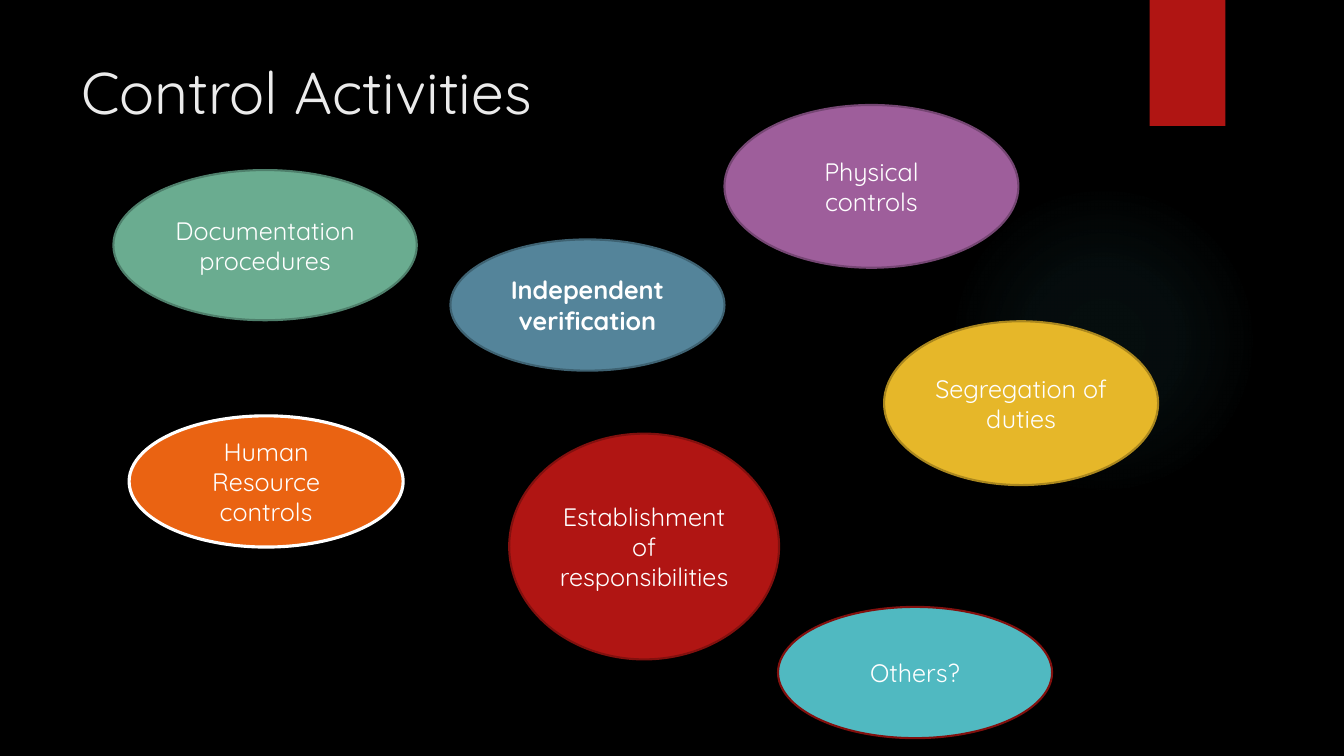
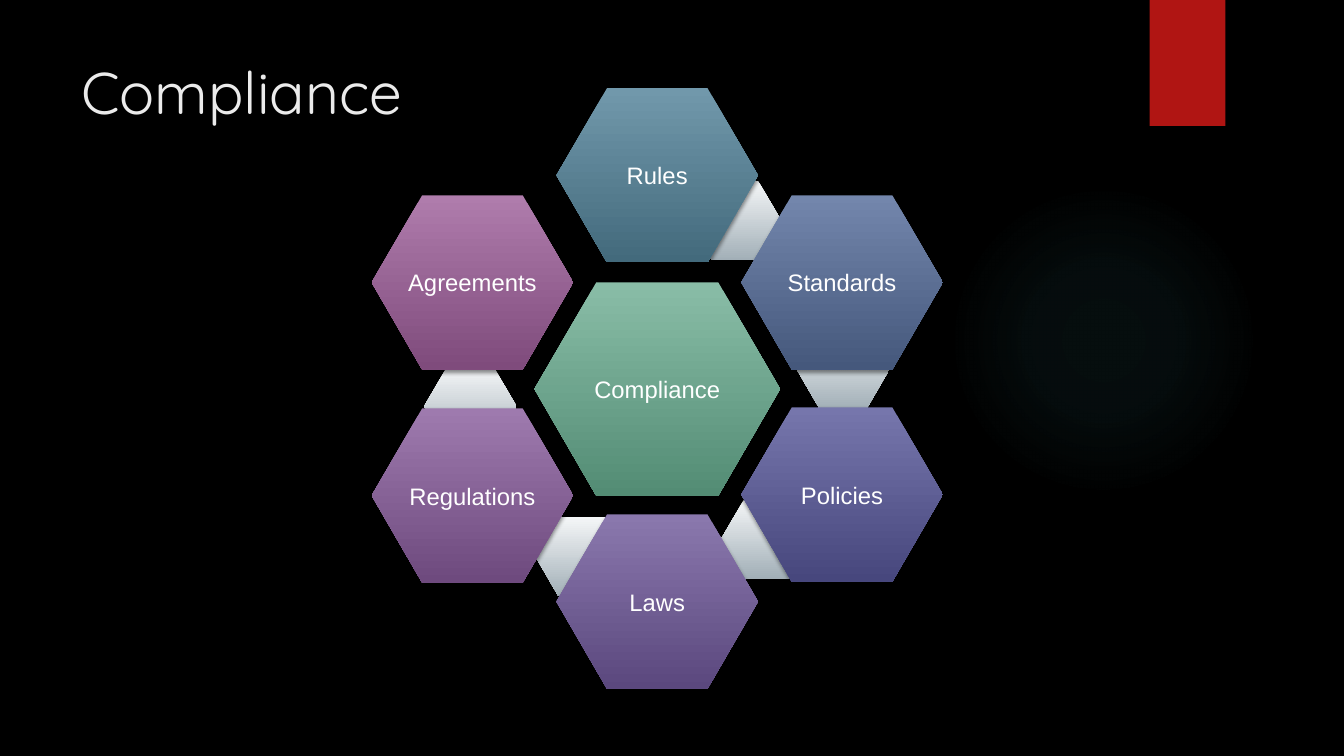
from dataclasses import dataclass
from math import cos, radians, sin

from lxml import etree
from pptx import Presentation
from pptx.dml.color import RGBColor
from pptx.enum.shapes import MSO_SHAPE as SHAPE
from pptx.enum.text import MSO_ANCHOR as ANCHOR, PP_ALIGN as ALIGN
from pptx.oxml import parse_xml
from pptx.oxml.ns import nsdecls, qn
from pptx.util import Pt

PX = 9525  # EMU per px, 96 px to the inch


@dataclass(frozen=True)
class Theme:
    back: str = "000000"
    title: str = "EBEBEB"
    text: str = "FFFFFF"
    red: str = "B01513"
    dark_red: str = "82100E"
    teal: str = "50B9C1"
    link: tuple = ("F5F7F8", "A2AFB7")
    font: str = "Quicksand"
    diagram_font: str = "Arial"
    title_size: int = 42
    label_size: int = 18
    hexagon_size: int = 17


class Deck:
    def __init__(self, theme):
        self.theme = theme
        self.prs = Presentation()
        self.prs.slide_width, self.prs.slide_height = 1280 * PX, 720 * PX
        self.slide = None

    def add_slide(self, title):
        """Start a slide with the background, glow, ribbon and title."""
        t = self.theme
        self.slide = self.prs.slides.add_slide(self.prs.slide_layouts[6])
        fill = self.slide.background.fill
        fill.solid()
        fill.fore_color.rgb = RGBColor.from_string(t.back)
        glow = self.shape(SHAPE.OVAL, 903, 176, 296, 296)
        self.gradient(glow, [(0, t.teal, 7), (36, t.teal, 6), (69, t.teal, 0)], radial=True)
        ribbon = self.shape(SHAPE.RECTANGLE, 1095, 0, 72, 120, t.red)
        self.shadow(ribbon)
        box = self.slide.shapes.add_textbox(68 * PX, 48 * PX, 988 * PX, 147 * PX)
        self.label(box, title, t.title_size, t.font, t.title, ALIGN.LEFT, ANCHOR.TOP)

    def shape(self, kind, x, y, w, h, fill=None):
        sp = self.slide.shapes.add_shape(kind, x * PX, y * PX, w * PX, h * PX)
        sp.shadow.inherit = False
        sp.line.fill.background()
        if fill:
            sp.fill.solid()
            sp.fill.fore_color.rgb = RGBColor.from_string(fill)
        return sp

    def gradient(self, sp, stops, radial=False):
        """Fill with (position %, colour, opacity %) stops, downwards or from the centre."""
        marks = "".join(
            f'<a:gs pos="{pos * 1000}"><a:srgbClr val="{color}">'
            f'<a:alpha val="{alpha * 1000}"/></a:srgbClr></a:gs>'
            for pos, color, alpha in stops)
        course = ('<a:path path="circle"><a:fillToRect l="50000" t="50000" r="50000" b="50000"/>'
                  '</a:path>' if radial else '<a:lin ang="5400000" scaled="0"/>')
        fill = parse_xml(f'<a:gradFill {nsdecls("a")} rotWithShape="1">'
                         f'<a:gsLst>{marks}</a:gsLst>{course}</a:gradFill>')
        sp._element.spPr.find(qn("a:prstGeom")).addnext(fill)

    def shadow(self, sp):
        effects = sp._element.spPr.find(qn("a:effectLst"))
        outer = etree.SubElement(effects, qn("a:outerShdw"), blurRad=str(Pt(3)),
                                 dist=str(Pt(2)), dir="5400000", rotWithShape="0")
        color = etree.SubElement(outer, qn("a:srgbClr"), val="000000")
        etree.SubElement(color, qn("a:alpha"), val="45000")

    def label(self, sp, text, size, font, color, align=ALIGN.CENTER, anchor=ANCHOR.MIDDLE,
              bold=False):
        tf = sp.text_frame
        tf.word_wrap = True
        tf.vertical_anchor = anchor
        tf.text = text
        p = tf.paragraphs[0]
        p.alignment = align
        f = p.runs[0].font
        f.size, f.name, f.bold = Pt(size), font, bold
        f.color.rgb = RGBColor.from_string(color)

    def bubble(self, text, x, y, w, h, fill, line, line_width=1.5, bold=False):
        t = self.theme
        sp = self.shape(SHAPE.OVAL, x, y, w, h, fill)
        sp.line.color.rgb = RGBColor.from_string(line)
        sp.line.width = Pt(line_width)
        self.label(sp, text, t.label_size, t.font, t.text, bold=bold)

    def hexagon(self, x, y, w, h, colors, text=None):
        """Draw a shaded hexagon; one with a label also casts a shadow."""
        t = self.theme
        sp = self.shape(SHAPE.HEXAGON, x, y, w, h)
        sp.adjustments[0] = 0.29
        self.gradient(sp, [(0, colors[0], 100), (100, colors[1], 100)])
        if text:
            self.shadow(sp)
            self.label(sp, text, t.hexagon_size, t.diagram_font, t.text)
            tf = sp.text_frame
            tf.word_wrap = False
            tf.margin_left = tf.margin_right = tf.margin_top = tf.margin_bottom = 2 * PX


def control_activities(deck):
    t = deck.theme
    deck.add_slide("Control Activities")
    deck.bubble("Documentation procedures", 108, 162, 289, 143, "6AAC90", "4E7F6B")
    deck.bubble("Independent verification", 429, 228, 261, 125, "54849A", "3E6272", bold=True)
    deck.bubble("Establishment of responsibilities", 485, 413, 257, 215, t.red, t.dark_red)
    deck.bubble("Segregation of duties", 842, 306, 261, 156, "E6B729", "AA871E")
    deck.bubble("Human Resource controls", 123, 396, 261, 125, "EA6312", t.text, 2.25)
    deck.bubble("Physical controls", 690, 100, 280, 155, "9E5E9B", "754673")
    deck.bubble("Others?", 741, 578, 261, 125, t.teal, t.dark_red)


def compliance(deck):
    deck.add_slide("Compliance")
    cx, cy, radius = 626, 370, 203
    w, h = 192, 166
    deck.hexagon(cx - 117, cy - 101, 234, 203, ("89BDA7", "538C74"), "Compliance")

    # Ring, clockwise from the top: label, shading, corner of the link behind it
    ring = [
        ("Rules", ("7198AB", "436A7C"), (656, 172)),
        ("Standards", ("7386AC", "45587C"), (759, 314)),
        ("Policies", ("7676AC", "47477D"), (687, 475)),
        ("Laws", ("8A78AD", "5B487E"), (510, 492)),
        ("Regulations", ("9E7AAE", "6E4A7E"), (404, 349)),
        ("Agreements", ("AF7CAC", "7F4B7C"), None),
    ]
    for i, (label, colors, link) in enumerate(ring):
        if link:
            deck.hexagon(*link, 88, 76, deck.theme.link)
        angle = radians(60 * i)
        x = round(cx + radius * sin(angle) - w / 2)
        y = round(cy - radius * cos(angle) - h / 2)
        deck.hexagon(x, y, w, h, colors, label)


def main():
    deck = Deck(Theme())
    control_activities(deck)
    compliance(deck)
    deck.prs.save("out.pptx")


if __name__ == "__main__":
    main()
